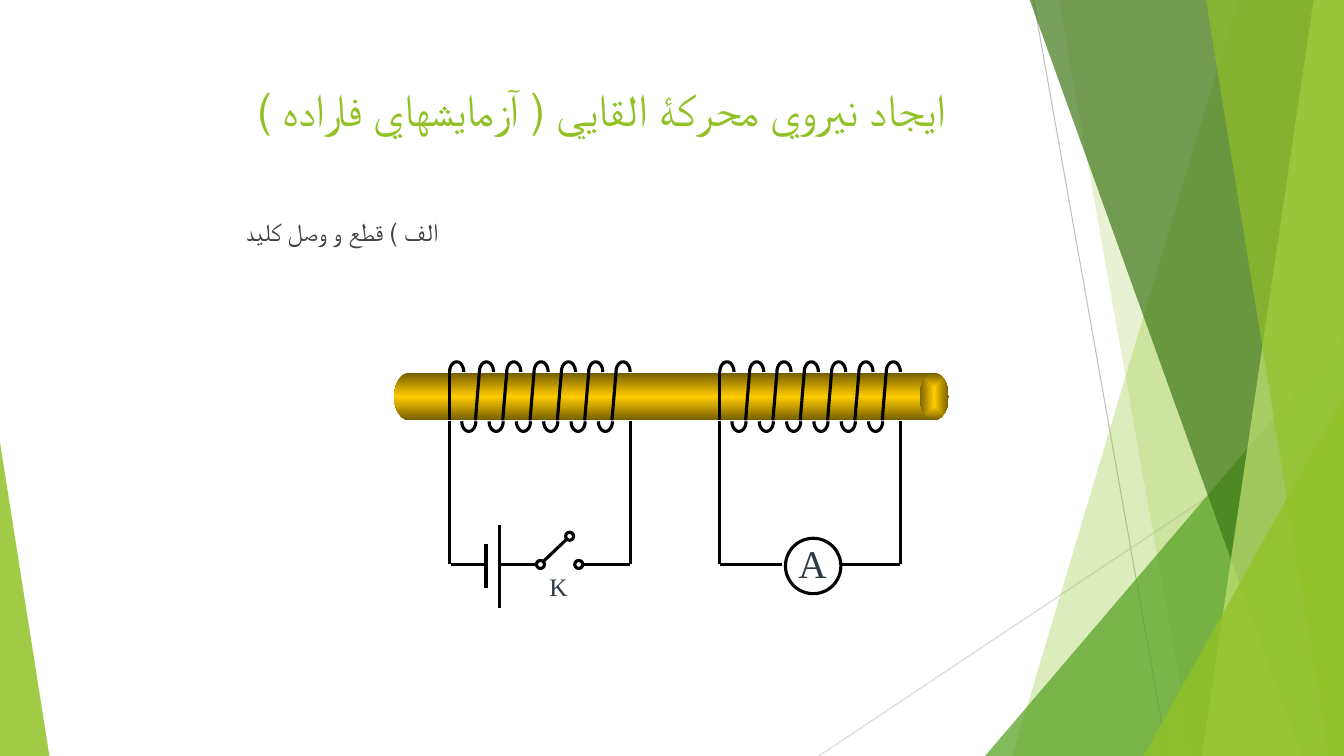
import math
import lxml.etree
import pptx
import pptx.dml.color
import pptx.enum.shapes
import pptx.enum.text
import pptx.oxml
import pptx.oxml.ns
import pptx.util

Inches = pptx.util.Inches
Pt = pptx.util.Pt
kinds = pptx.enum.shapes.MSO_SHAPE
fit = pptx.enum.text.MSO_AUTO_SIZE
qn = pptx.oxml.ns.qn

deck = pptx.Presentation()
deck.slide_width = Inches(13.33)
deck.slide_height = Inches(7.5)
slide = deck.slides.add_slide(deck.slide_layouts[6])
shapes = slide.shapes


def paint(part, color, alpha=100):
    part.solid()
    part.fore_color.rgb = pptx.dml.color.RGBColor.from_string(color)
    if alpha < 100:
        node = part.fore_color._xFill.find(qn("a:srgbClr"))
        lxml.etree.SubElement(node, qn("a:alpha"), val=str(alpha * 1000))


def wire(x1, y1, x2, y2, color="000000", width=2.25):
    line = shapes.add_connector(pptx.enum.shapes.MSO_CONNECTOR.STRAIGHT,
                                Inches(x1), Inches(y1), Inches(x2), Inches(y2))
    paint(line.line.fill, color)
    line.line.width = Pt(width)
    lxml.etree.SubElement(line._element.spPr, qn("a:effectLst"))


wire(10.25, 0, 11.58, 7.5, "BFBFBF", 0.75)
wire(13.33, 4.03, 8.12, 7.5, "D9D9D9", 0.75)

# bands: x of top left, top right, bottom right, bottom left
# triangles: left, top, width, height, apex
facets = [
    ((12.28, 13.33, 13.33, 10.04), "90C226", 30),
    ((10.5, 13.33, 13.33, 11.83), "90C226", 20),
    ((9.77, 3.33, 3.56, 4.17, 1), "54A021", 72),
    ((10.21, 13.33, 13.33, 12.91), "3F7819", 70),
    ((13.03, 13.33, 13.33, 11.92), "C0E474", 70),
    ((11.96, 13.33, 13.33, 13.18), "90C226", 65),
    ((11.34, 3.93, 1.99, 3.57, 1), "90C226", 80),
    ((0, 4.39, 0.49, 3.11, 0), "90C226", 85),
]
for spots, color, alpha in facets:
    if len(spots) == 4:
        pts = [(Inches(x), Inches(y)) for x, y in zip(spots, (-0.01, -0.01, 7.5, 7.5))]
        path = shapes.build_freeform(*pts[0])
        path.add_line_segments(pts[1:])
        facet = path.convert_to_shape()
    else:
        facet = shapes.add_shape(kinds.ISOSCELES_TRIANGLE, *map(Inches, spots[:4]))
        facet.adjustments[0] = spots[4]
    facet.shadow.inherit = False
    paint(facet.fill, color, alpha)
    facet.line.fill.background()

labels = [
    ("ايجاد نيروي محركۀ القايي ( آزمايشهاي فاراده )", 2.45, 0.76, 8.75, 0.92, 32.4, "Karla", "90C226"),
    ("الف ) قطع و وصل كليد", 2.34, 2.1, 8.5, 0.76, 18, "Karla", "404040"),
    ("A", 7.82, 5.3, 0.48, 0.57, 28, "Times New Roman", "2C3C43"),
    ("K", 5.35, 5.62, 0.38, 0.4, 18, "Times New Roman", "2C3C43"),
]
for text, x, y, wide, high, size, face, color in labels:
    box = shapes.add_textbox(Inches(x), Inches(y), Inches(wide), Inches(high))
    frame = box.text_frame
    frame.word_wrap = wide > 1
    frame.auto_size = fit.NONE if wide > 1 else fit.SHAPE_TO_FIT_TEXT
    para = frame.paragraphs[0]
    para.text = text
    para.font.size = Pt(size)
    para.font.name = face
    paint(para.font.fill, color)

dark, gold = "765E00", "FFCC00"
across = '<a:lin ang="5400000" scaled="0"/>'
inward = ('<a:path path="shape"><a:fillToRect l="50000" t="50000" '
          'r="50000" b="50000"/></a:path>')
rod = [
    (kinds.OVAL, 3.91, 0.29, (dark, gold, dark), across),
    (kinds.RECTANGLE, 4.05, 5.21, (dark, gold, dark), across),
    (kinds.OVAL, 9.12, 0.29, (gold, dark), inward),
]
for kind, x, wide, tones, way in rod:
    part = shapes.add_shape(kind, Inches(x), Inches(3.7), Inches(wide), Inches(0.47))
    part.shadow.inherit = False
    part.line.fill.background()
    stops = "".join(
        f'<a:gs pos="{100000 * i // (len(tones) - 1)}"><a:srgbClr val="{tone}"/></a:gs>'
        for i, tone in enumerate(tones))
    grad = pptx.oxml.parse_xml(
        '<a:gradFill xmlns:a="http://schemas.openxmlformats.org/drawingml/2006/main" '
        f'rotWithShape="1"><a:gsLst>{stops}</a:gsLst>{way}</a:gradFill>')
    part._element.spPr.find(qn("a:prstGeom")).addnext(grad)

for start in (4.46, 7.14):
    turns = [start + 0.295 + 0.271 * i for i in range(6)]
    arcs = [(x, 3.69, -0.1) for x in [start] + turns]
    arcs += [(x - 0.175, 4.18, 0.1) for x in turns]
    for x, y, rise in arcs:
        pts = [(Inches(x + 0.07 - 0.07 * math.cos(math.pi * i / 16)),
                Inches(y + rise * math.sin(math.pi * i / 16))) for i in range(17)]
        path = shapes.build_freeform(*pts[0])
        path.add_line_segments(pts[1:], close=False)
        arc = path.convert_to_shape()
        arc.shadow.inherit = False
        arc.fill.background()
        paint(arc.line.fill, "000000")
        arc.line.width = Pt(2.25)
    for x in turns:
        wire(x, 3.69, x - 0.04, 4.17)
    wire(start, 3.69, start, 4.17)
    wire(start, 4.18, start, 5.6)
    wire(start + 1.795, 4.18, start + 1.795, 5.6)

for ends in [
    (5.39, 5.57, 5.63, 5.34),
    (5.34, 5.6, 4.95, 5.6),
    (4.95, 6.03, 4.95, 5.21),
    (4.82, 5.83, 4.82, 5.4),
    (4.8, 5.6, 4.47, 5.6),
    (6.25, 5.6, 5.78, 5.6),
    (7.14, 5.6, 7.76, 5.6),
    (8.34, 5.6, 8.93, 5.6),
]:
    wire(*ends)

for x, y, size in [(5.32, 5.56, 0.08), (5.7, 5.56, 0.08), (5.61, 5.28, 0.08), (7.79, 5.34, 0.55)]:
    ring = shapes.add_shape(kinds.OVAL, Inches(x), Inches(y), Inches(size), Inches(size))
    ring.shadow.inherit = False
    if size < 0.1:
        paint(ring.fill, "FFFFFF")
    else:
        ring.fill.background()
    paint(ring.line.fill, "000000")
    ring.line.width = Pt(2.25)

deck.save("out.pptx")
